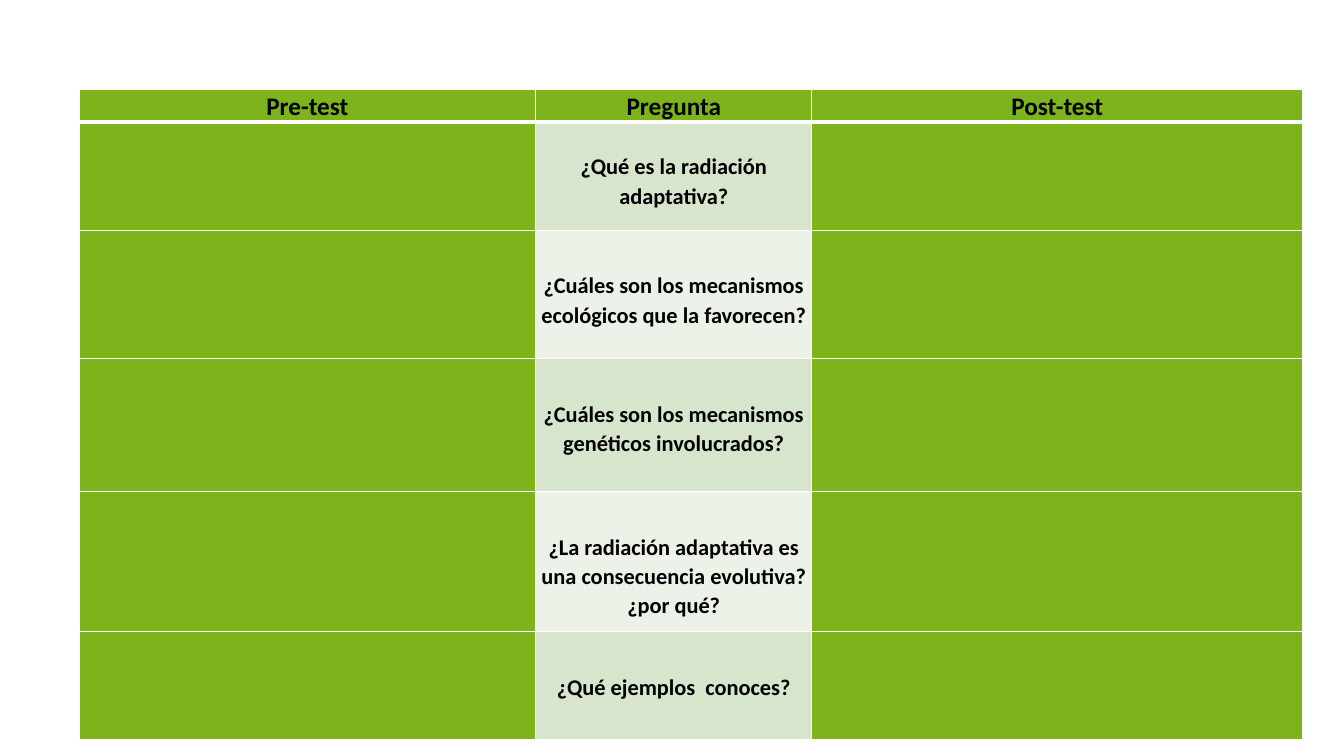
from lxml.etree import SubElement
from pptx import Presentation
from pptx.dml.color import RGBColor
from pptx.enum.text import PP_ALIGN
from pptx.oxml.ns import qn
from pptx.util import Cm, Pt

COLORS = {"green": "7DB41B", "odd": "D7E5CD", "even": "ECF2E8",
          "line": "FFFFFF", "text": "000000"}
HEADERS = ["Pre-test", "Pregunta", "Post-test"]
COL_WIDTHS = [11.51, 6.96, 12.37]
HEADER_HEIGHT = 0.82
QUESTIONS = [
    ("¿Qué es la radiación adaptativa?", 2.72, 0.74),
    ("¿Cuáles son los mecanismos ecológicos que la favorecen?", 3.23, 1.02),
    ("¿Cuáles son los mecanismos genéticos involucrados?", 3.35, 1.02),
    ("¿La radiación adaptativa es una consecuencia evolutiva? ¿por qué?", 3.53, 1.02),
    ("¿Qué ejemplos  conoces?", 2.72, 1.02),
]


class SlideBuilder:
    """Draws styled tables on the current slide."""

    def __init__(self, slide, font="Calibri"):
        self.slide = slide
        self.font = font

    def table(self, left, top, widths, heights):
        frame = self.slide.shapes.add_table(
            len(heights), len(widths), Cm(left), Cm(top),
            Cm(sum(widths)), Cm(sum(heights)))
        table = frame.table
        for col, width in zip(table.columns, widths):
            col.width = Cm(width)
        for row, height in zip(table.rows, heights):
            row.height = Cm(height)
        return table

    def cell(self, cell, fill, top_line=1, bottom_line=1):
        tc_pr = cell._tc.get_or_add_tcPr()
        for side, width in zip("LRTB", (1, 1, top_line, bottom_line)):
            ln = SubElement(tc_pr, qn(f"a:ln{side}"), w=str(Pt(width)))
            solid = SubElement(ln, qn("a:solidFill"))
            SubElement(solid, qn("a:srgbClr"), val=COLORS["line"])
        cell.fill.solid()
        cell.fill.fore_color.rgb = RGBColor.from_string(COLORS[fill])

    def text(self, cell, text, size, margin_top=0):
        cell.margin_left = cell.margin_right = Cm(0.14)
        cell.margin_top, cell.margin_bottom = Cm(margin_top), Cm(0)
        p = cell.text_frame.paragraphs[0]
        p.alignment = PP_ALIGN.CENTER
        p.line_spacing = 1.07
        r = p.add_run()
        r.text = text
        r.font.name = self.font
        r.font.size = Pt(size)
        r.font.bold = True
        r.font.color.rgb = RGBColor.from_string(COLORS["text"])


def main():
    prs = Presentation()
    prs.slide_width, prs.slide_height = Cm(33.87), Cm(19.05)
    builder = SlideBuilder(prs.slides.add_slide(prs.slide_layouts[6]))

    heights = [HEADER_HEIGHT] + [height for _, height, _ in QUESTIONS]
    table = builder.table(1.99, 2.25, COL_WIDTHS, heights)
    for col, header in enumerate(HEADERS):
        cell = table.cell(0, col)
        builder.cell(cell, "green", bottom_line=3)
        builder.text(cell, header, 18)

    for row, (question, _, margin_top) in enumerate(QUESTIONS, 1):
        fills = ("green", "odd" if row % 2 else "even", "green")
        for col, fill in enumerate(fills):
            builder.cell(table.cell(row, col), fill, top_line=3 if row == 1 else 1)
        builder.text(table.cell(row, 1), question, 16, margin_top)

    prs.save("out.pptx")


if __name__ == "__main__":
    main()
